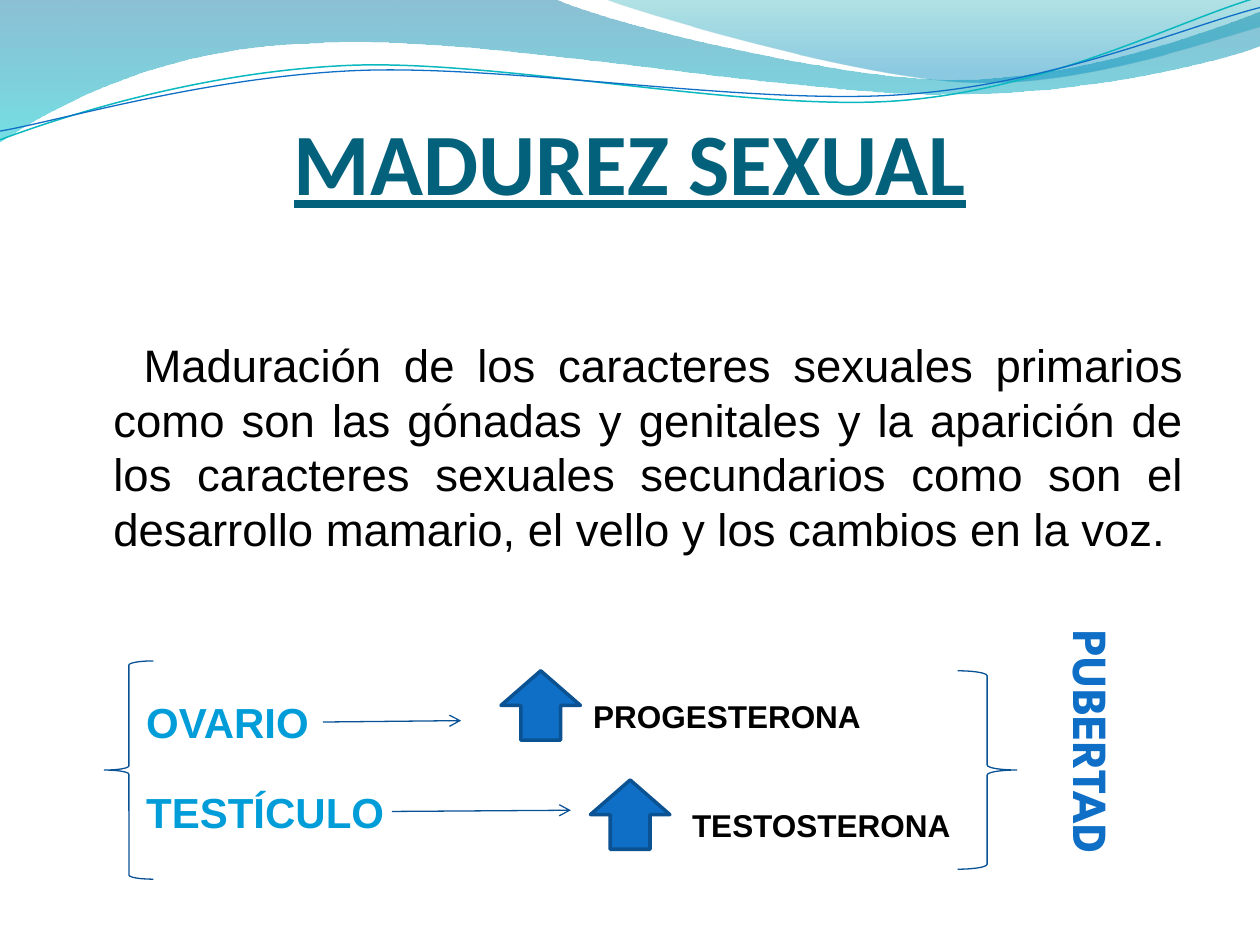
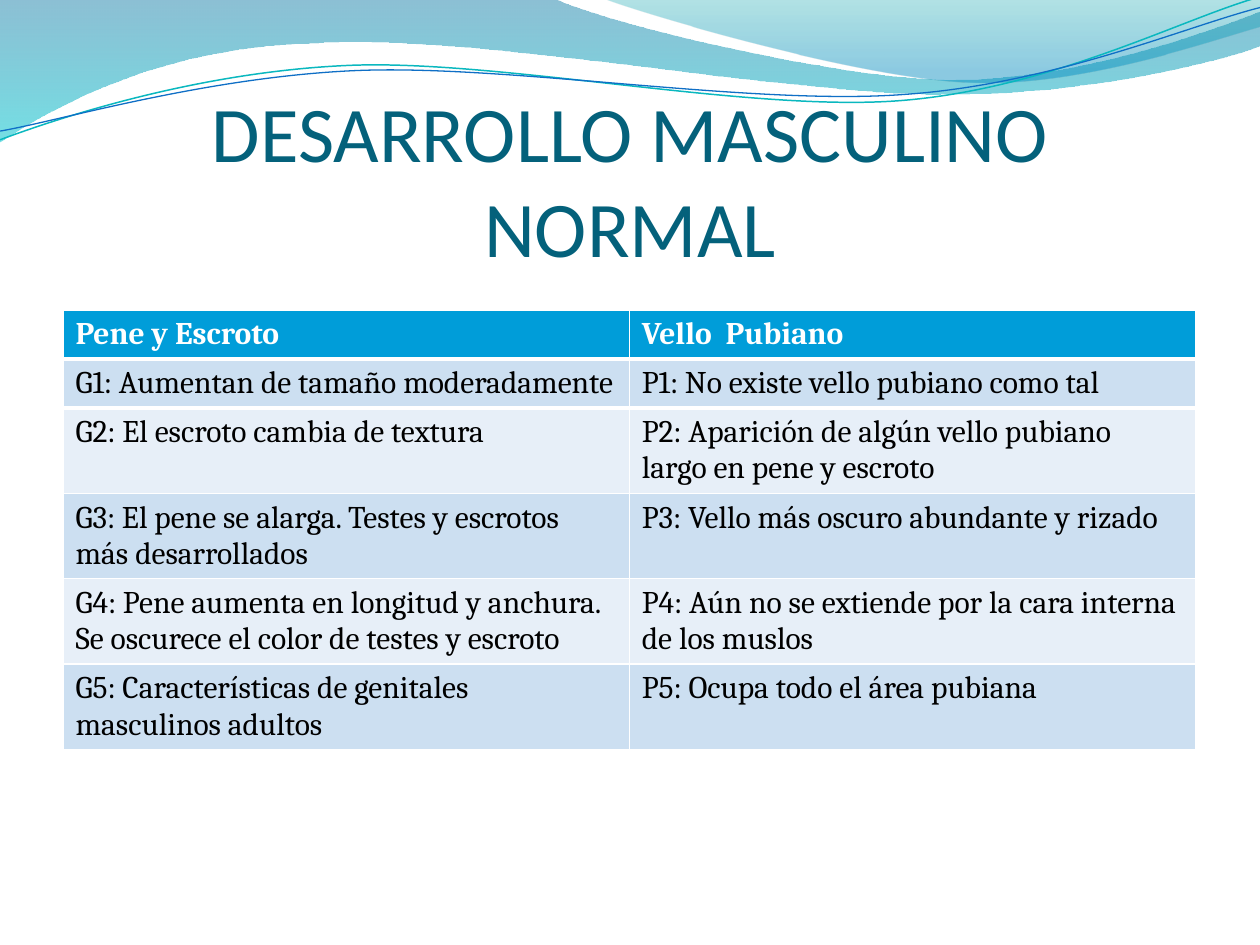
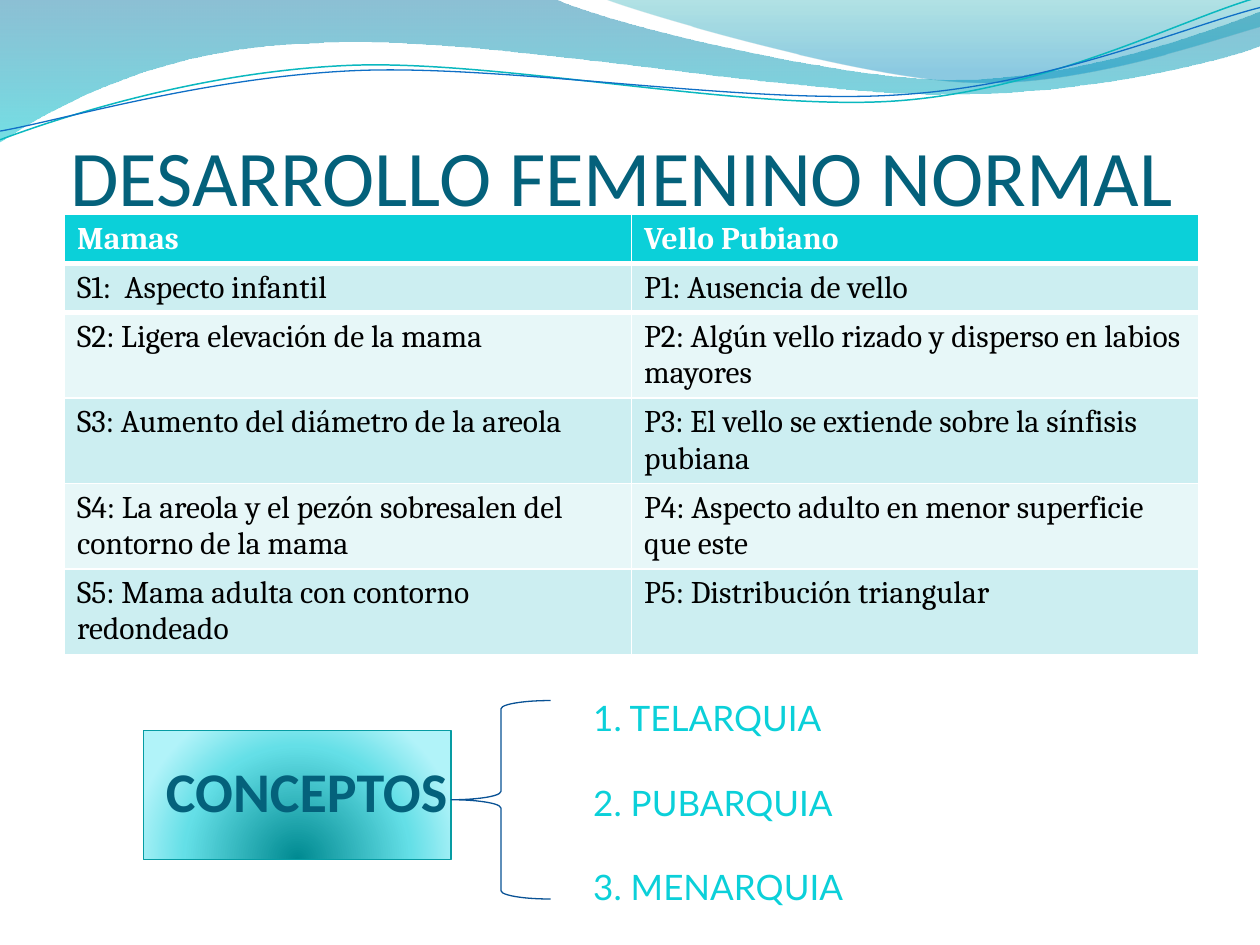
from lxml.etree import SubElement
from pptx import Presentation
from pptx.dml.color import RGBColor
from pptx.enum.shapes import MSO_CONNECTOR, MSO_SHAPE
from pptx.enum.text import MSO_ANCHOR, MSO_AUTO_SIZE, PP_ALIGN
from pptx.oxml.ns import qn
from pptx.util import Pt

COLORS = {
    "title": "04617B", "black": "000000", "white": "FFFFFF",
    "blue": "0F6FC6", "blue_edge": "0B5292", "rule": "095295",
    "sky": "009DD9", "sky_band": "CCDFF1", "sky_pale": "E7EFF8",
    "aqua": "0BD0D9", "aqua_band": "CCEEF1", "aqua_pale": "E7F7F8",
    "teal_line": "0AB8BF", "box_edge": "069CA3",
}
RGB = {name: RGBColor.from_string(value) for name, value in COLORS.items()}


def write(tf, *lines, size, font, color, bold=False, underline=False, align=None, gap=0):
    """Fill a text frame with one paragraph per line, gap points apart."""
    for i, line in enumerate(lines):
        p = tf.add_paragraph() if i else tf.paragraphs[0]
        p.alignment = align
        p.space_before = Pt(gap if i else 0)
        r = p.add_run()
        r.text = line
        r.font.size, r.font.name = Pt(size), font
        r.font.bold, r.font.underline = bold, underline
        r.font.color.rgb = RGB[color]


def gradient(sp, stops):
    """Give a shape a top-to-bottom gradient of (position, hex, opacity) stops."""
    sp.fill.gradient()
    sp.fill.gradient_angle = 270
    grad = sp.element.spPr.find(qn("a:gradFill"))
    gs_list = grad.find(qn("a:gsLst"))
    gs_list.clear()
    for pos, color, opacity in stops:
        gs = SubElement(gs_list, qn("a:gs"), pos=str(pos * 1000))
        clr = SubElement(gs, qn("a:srgbClr"), val=color)
        if opacity < 100:
            SubElement(clr, qn("a:alpha"), val=str(opacity * 1000))
    return grad


prs = Presentation()
prs.slide_width, prs.slide_height = Pt(720), Pt(540)

# Slides and their titles
WITH_BODY, TITLE_ONLY = prs.slide_layouts[1], prs.slide_layouts[5]
slides = []
for layout, title, box, style in [
    (WITH_BODY, "MADUREZ SEXUAL", (36, 31.7, 648, 90), dict(size=50, bold=True, underline=True)),
    (TITLE_ONLY, "DESARROLLO MASCULINO NORMAL", (36, 66, 648, 90), dict(size=45)),
    (TITLE_ONLY, "DESARROLLO FEMENINO NORMAL", (31.2, 42.9, 648, 84.2), dict(size=45)),
]:
    s = prs.slides.add_slide(layout)
    sp = s.shapes.title
    sp.left, sp.top, sp.width, sp.height = map(Pt, box)
    tf = sp.text_frame
    tf.auto_size = MSO_AUTO_SIZE.NONE
    tf.vertical_anchor = MSO_ANCHOR.BOTTOM
    tf.margin_left = tf.margin_right = tf.margin_bottom = 0
    write(tf, title, font="Calibri", color="title", align=PP_ALIGN.CENTER, **style)
    slides.append(s)
maturity, male, female = slides

# Waves on the master: a pair is a straight step, six numbers are a Bezier curve
waves = [
    ([(0, 0), (316.8, -0.7), (342.7, 12.2, 478.1, 45.4, 545.8, 45.4),
      (614.2, 45.4, 689.8, 18.7, 720, 6.5), (720.7, 25.9),
      (707.8, 31.7, 626.4, 54.7, 537.1, 54), (447.8, 54, 275, 20.2, 185, 24.5),
      (92.9, 25.9, 33.1, 59.8, -0.7, 81.4)],
     [(0, "0074A1", 45), (100, "00C6CF", 55)], None, 0),
    ([(344.9, -0.7), (366.5, 7.9, 491, 44.6, 553.7, 46.8),
      (616.3, 49.7, 691.9, 23, 720, 15.1), (720, 0)],
     [(0, "00A1A9", 30), (80, "008BBF", 45)], None, 0),
    ([(0, 79.9), (34.6, 67, 113.8, 41, 199.4, 37.4),
      (284.4, 33.8, 427, 64.1, 513.4, 57.6), (599.8, 51.1, 675.4, 10.8, 718.6, -1.4)],
     None, "teal_line", 0.85),
    ([(0, 74.9), (33.8, 69.1, 118.1, 43.9, 203.8, 40.3),
      (290.2, 36.7, 429.8, 60.5, 516.2, 54), (601.9, 48.2, 677.5, 15.1, 720, 4.3)],
     None, "blue", 0.75),
]
for i, (steps, stops, line, width) in enumerate(waves):
    points = [(Pt(step[n]), Pt(step[n + 1])) for step in steps for n in range(0, len(step), 2)]
    builder = maturity.shapes.build_freeform(*points[0])
    builder.add_line_segments(points[1:], close=bool(stops))
    sp = builder.convert_to_shape()
    segments = iter(list(sp.element.iter(qn("a:lnTo"))))
    for step in steps[1:]:
        segment = next(segments)
        if len(step) == 6:
            curve = segment.makeelement(qn("a:cubicBezTo"))
            segment.addprevious(curve)
            for control in (segment, next(segments), next(segments)):
                curve.append(control[0])
                control.getparent().remove(control)
    sp.shadow.inherit = False
    if stops:
        gradient(sp, stops)
        sp.line.fill.background()
    else:
        sp.fill.background()
        sp.line.color.rgb, sp.line.width = RGB[line], Pt(width)
    sp.element.nvSpPr.cNvPr.set("id", str(20 + i))
    prs.slide_master.shapes.element.insert(2 + i, sp.element)

# Maturity: definition
body = maturity.placeholders[1]
body.left, body.top, body.width, body.height = map(Pt, (36, 152.6, 648, 345.6))
tf = body.text_frame
tf.auto_size = MSO_AUTO_SIZE.NONE
tf.margin_top = Pt(40)
write(tf, "Maduración de los caracteres sexuales primarios como son las gónadas y genitales "
      "y la aparición de los caracteres sexuales secundarios como son el desarrollo mamario, "
      "el vello y los cambios en la voz.",
      size=26, font="Arial", color="black", align=PP_ALIGN.JUSTIFY)
pPr = tf.paragraphs[0]._p.get_or_add_pPr()
pPr.set("marL", str(Pt(21.6)))
pPr.set("indent", str(Pt(17.2)))
SubElement(pPr, qn("a:buNone"))

# Text boxes of all slides
GLAND = dict(size=24, font="Arial", color="sky", bold=True)
HORMONE = dict(size=18, font="Arial", color="black", bold=True)
boxes = {}
for s, lines, box, style in [
    (maturity, ["OVARIO"], (76.5, 394.6, 108, 36), GLAND),
    (maturity, ["TESTÍCULO"], (76.5, 445.7, 158.4, 36), GLAND),
    (maturity, ["PROGESTERONA"], (331.9, 394.6, 187.2, 28.8), HORMONE),
    (maturity, ["TESTOSTERONA"], (388.4, 457.2, 169.9, 28.8), HORMONE),
    (maturity, ["PUBERTAD"], (531.4, 426.2, 186.5, 41),
     dict(size=28, font="League Spartan", color="blue", bold=True)),
    (female, ["1. TELARQUIA", "2. PUBARQUIA", "3. MENARQUIA"], (331.9, 394.6, 169.9, 128.2),
     dict(size=20, font="Lato", color="aqua", gap=24.3)),
    (female, ["CONCEPTOS"], (87.8, 428.7, 345.6, 46),
     dict(size=32, font="Calibri", color="title", bold=True)),
]:
    sp = s.shapes.add_textbox(*map(Pt, box))
    sp.text_frame.word_wrap = True
    write(sp.text_frame, *lines, **style)
    boxes[lines[0]] = sp
puberty = boxes["PUBERTAD"]
puberty.rotation = 90
puberty.fill.solid()
puberty.fill.fore_color.rgb = RGB["white"]

# Maturity: arrows from gland to hormone
for x1, y1, x2, y2, gland in [
    (184.5, 412.6, 263.5, 411.8, boxes["OVARIO"]),
    (223.9, 463.7, 326.2, 463, None),
]:
    arrow = maturity.shapes.add_connector(MSO_CONNECTOR.STRAIGHT, Pt(x1), Pt(y1), Pt(x2), Pt(y2))
    if gland:
        arrow.begin_connect(gland, 3)
    arrow.line.color.rgb, arrow.line.width = RGB["rule"], Pt(0.75)
    SubElement(arrow.line._get_or_add_ln(), qn("a:tailEnd"), type="arrow")
    SubElement(arrow.element.spPr, qn("a:effectLst"))

# Up arrows, braces and the concept box
for s, kind, box, fill, line, width in [
    (maturity, MSO_SHAPE.UP_ARROW, (286.3, 383.3, 45.4, 39.6), "blue", "blue_edge", 2),
    (maturity, MSO_SHAPE.UP_ARROW, (337.4, 445.7, 45.4, 39.6), "blue", "blue_edge", 2),
    (maturity, MSO_SHAPE.LEFT_BRACE, (59.6, 377.7, 28.1, 124.7), None, "rule", 0.75),
    (maturity, MSO_SHAPE.RIGHT_BRACE, (547.2, 383.3, 33.8, 113.4), None, "rule", 0.75),
    (female, MSO_SHAPE.LEFT_BRACE, (257.8, 400.3, 56.9, 113.4), None, "rule", 0.75),
    (female, MSO_SHAPE.FLOWCHART_PROCESS, (82.1, 417.6, 175.7, 73.4), None, "box_edge", 0.75),
]:
    sp = s.shapes.add_shape(kind, *map(Pt, box))
    sp.shadow.inherit = False
    sp.line.color.rgb, sp.line.width = RGB[line], Pt(width)
    if fill:
        sp.fill.solid()
        sp.fill.fore_color.rgb = RGB[fill]
    else:
        sp.fill.background()

concept = sp
grad = gradient(concept, [(0, "008A91", 100), (68, "64DFE7", 100), (100, "B1F3F9", 100)])
grad.remove(grad.find(qn("a:lin")))
radial = SubElement(grad, qn("a:path"), path="circle")
SubElement(radial, qn("a:fillToRect"), l="50000", t="130000", r="50000", b="-30000")
boxes["CONCEPTOS"].element.addprevious(concept.element)

# Stage tables, with a thick white rule under the header
ROW_HEIGHTS = [28, 28, 48.8, 48.8, 48.8, 48.8]
for s, left, top, width, hue, rows in [
    (male, 36, 177.1, 647.2, "sky", [
        ("Pene y Escroto", "Vello  Pubiano"),
        ("G1: Aumentan de tamaño moderadamente", "P1: No existe vello pubiano como tal"),
        ("G2: El escroto cambia de textura",
         "P2: Aparición de algún vello pubiano largo en pene y escroto"),
        ("G3: El pene se alarga. Testes y escrotos más desarrollados",
         "P3: Vello más oscuro abundante y rizado"),
        ("G4: Pene aumenta en longitud y anchura. Se oscurece el color de testes y escroto",
         "P4: Aún no se extiende por la cara interna de los muslos"),
        ("G5: Características de genitales masculinos adultos", "P5: Ocupa todo el área pubiana"),
    ]),
    (female, 36.9, 122.7, 648, "aqua", [
        ("Mamas", "Vello Pubiano"),
        ("S1:  Aspecto infantil", "P1: Ausencia de vello"),
        ("S2: Ligera elevación de la mama",
         "P2: Algún vello rizado y disperso en labios mayores"),
        ("S3: Aumento del diámetro de la areola",
         "P3: El vello se extiende sobre la sínfisis pubiana"),
        ("S4: La areola y el pezón sobresalen del contorno de la mama",
         "P4: Aspecto adulto en menor superficie que este"),
        ("S5: Mama adulta con contorno redondeado", "P5: Distribución triangular"),
    ]),
]:
    frame = s.shapes.add_table(len(rows), 2, Pt(left), Pt(top), Pt(width), Pt(sum(ROW_HEIGHTS)))
    table = frame.table
    for i, row in enumerate(rows):
        table.rows[i].height = Pt(ROW_HEIGHTS[i])
        fill = hue if i == 0 else hue + ("_band" if i % 2 else "_pale")
        for j, text in enumerate(row):
            cell = table.cell(i, j)
            if i < 2:
                tcPr = cell._tc.get_or_add_tcPr()
                ln = SubElement(tcPr, qn("a:lnT" if i else "a:lnB"), w=str(Pt(3)))
                SubElement(SubElement(ln, qn("a:solidFill")), qn("a:srgbClr"), val=COLORS["white"])
            cell.fill.solid()
            cell.fill.fore_color.rgb = RGB[fill]
            write(cell.text_frame, text, size=18, font="Cambria",
                  color="black" if i else "white", bold=i == 0)
    if s is female:
        s.shapes.title.element.addnext(frame.element)

prs.save("out.pptx")
